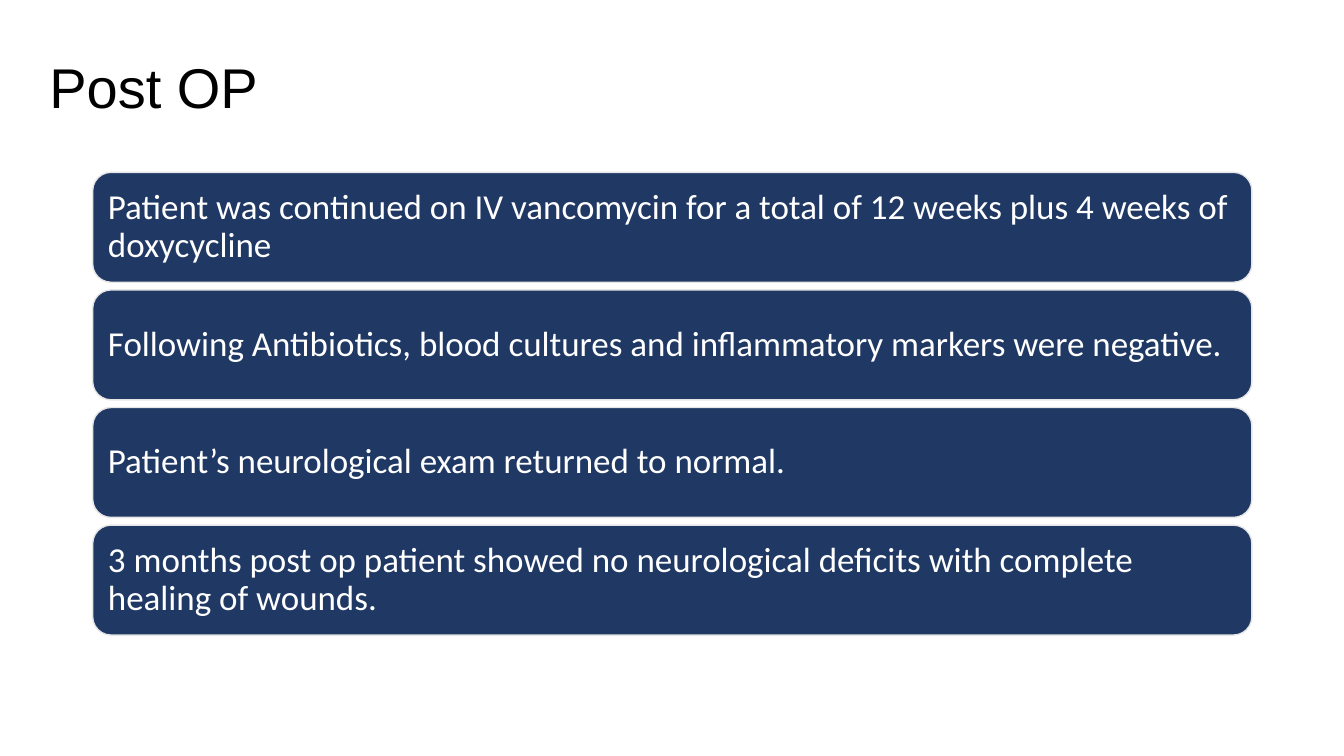
from pptx import Presentation
from pptx.dml.color import RGBColor
from pptx.enum.shapes import MSO_SHAPE
from pptx.enum.text import MSO_ANCHOR, MSO_AUTO_SIZE, PP_ALIGN
from pptx.util import Pt

TITLE = "Post OP"
OUTCOMES = [
    "Patient was continued on IV vancomycin for a total of 12 weeks plus 4 weeks of doxycycline",
    "Following Antibiotics, blood cultures and inflammatory markers were negative.",
    "Patient’s neurological exam returned to normal.",
    "3 months post op patient showed no neurological deficits with complete healing of wounds.",
]

NAVY = RGBColor(0x20, 0x38, 0x64)
PALE_GRAY = RGBColor(0xE7, 0xE6, 0xE6)
WHITE = RGBColor(0xFF, 0xFF, 0xFF)
BLACK = RGBColor(0, 0, 0)

BAR_LEFT, BAR_TOP = 66.24, 123.1
BAR_WIDTH, BAR_HEIGHT = 828, 78.5
BAR_PITCH = 84
BAR_INSET = Pt(7.2)


def style_text(paragraph, font_name, size, color):
    paragraph.alignment = PP_ALIGN.LEFT
    paragraph.font.name = font_name
    paragraph.font.size = Pt(size)
    paragraph.font.color.rgb = color


def add_title(slide):
    title = slide.shapes.title
    title.left, title.top = Pt(28.08), Pt(33.84)
    title.width, title.height = Pt(164.88), Pt(55.44)
    frame = title.text_frame
    frame.text = TITLE
    frame.word_wrap = False
    frame.auto_size = MSO_AUTO_SIZE.SHAPE_TO_FIT_TEXT
    frame.vertical_anchor = MSO_ANCHOR.TOP
    style_text(frame.paragraphs[0], "Arial", 40, BLACK)


def add_outcome(slide, row, outcome):
    bar = slide.shapes.add_shape(
        MSO_SHAPE.ROUNDED_RECTANGLE,
        Pt(BAR_LEFT), Pt(BAR_TOP + row * BAR_PITCH), Pt(BAR_WIDTH), Pt(BAR_HEIGHT),
    )
    bar.shadow.inherit = False
    bar.fill.solid()
    bar.fill.fore_color.rgb = NAVY
    bar.line.color.rgb = PALE_GRAY
    bar.line.width = Pt(1)
    frame = bar.text_frame
    frame.text = outcome
    frame.word_wrap = True
    frame.vertical_anchor = MSO_ANCHOR.MIDDLE
    frame.margin_left = frame.margin_right = BAR_INSET
    frame.margin_top = frame.margin_bottom = BAR_INSET
    paragraph = frame.paragraphs[0]
    paragraph.line_spacing = 0.9
    style_text(paragraph, "Calibri", 25, WHITE)


def main():
    presentation = Presentation()
    presentation.slide_width, presentation.slide_height = Pt(960), Pt(540)
    slide = presentation.slides.add_slide(presentation.slide_layouts[5])
    add_title(slide)
    for row, outcome in enumerate(OUTCOMES):
        add_outcome(slide, row, outcome)
    presentation.save("out.pptx")


if __name__ == "__main__":
    main()
